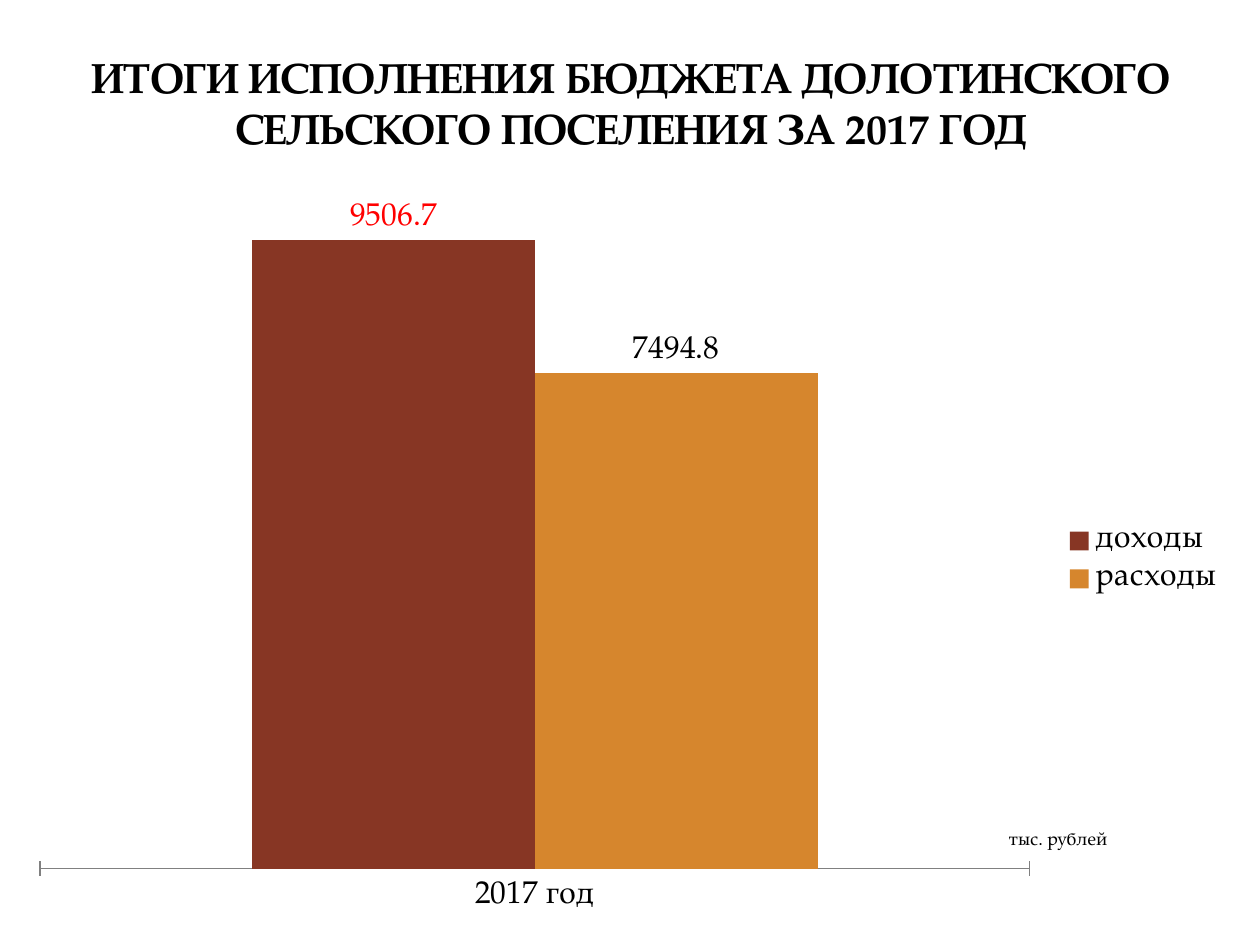
from lxml import etree
from pptx import Presentation
from pptx.chart.data import CategoryChartData
from pptx.dml.color import RGBColor
from pptx.enum.chart import XL_CHART_TYPE, XL_LABEL_POSITION, XL_LEGEND_POSITION, XL_TICK_LABEL_POSITION, XL_TICK_MARK
from pptx.enum.text import MSO_ANCHOR, PP_ALIGN
from pptx.oxml.ns import qn
from pptx.util import Pt

BARS = XL_CHART_TYPE.COLUMN_CLUSTERED
ABOVE = XL_LABEL_POSITION.OUTSIDE_END
RIGHT = XL_LEGEND_POSITION.RIGHT
LOW = XL_TICK_LABEL_POSITION.LOW
CROSS = XL_TICK_MARK.CROSS
TOP = MSO_ANCHOR.TOP
CENTER = PP_ALIGN.CENTER
LEFT = PP_ALIGN.LEFT

HUES = {
    "text": "000000",
    "income": "873624",
    "spend": "D6862D",
    "mark": "FF0000",
    "axis": "808080",
}


class Deck:
    face = "TeX Gyre Pagella"

    def __init__(self, wide, high):
        self.prs = Presentation()
        self.prs.slide_width, self.prs.slide_height = Pt(wide), Pt(high)
        self.slide = self.prs.slides.add_slide(self.prs.slide_layouts[5])

    def hue(self, name):
        return RGBColor.from_string(HUES[name])

    def font(self, font, size, hue="text", bold=False):
        font.name, font.size, font.bold = self.face, Pt(size), bold
        font.color.rgb = self.hue(hue)

    def label(self, shape, text, size, align, bold=False):
        frame = shape.text_frame
        frame.text = text
        frame.word_wrap = True
        frame.vertical_anchor = TOP
        para = frame.paragraphs[0]
        para.alignment = align
        self.font(para.runs[0].font, size, bold=bold)

    def title(self, text, box, size):
        shape = self.slide.shapes.title
        shape.left, shape.top, shape.width, shape.height = map(Pt, box)
        self.label(shape, text, size, CENTER, True)

    def note(self, text, box, size):
        shape = self.slide.shapes.add_textbox(*map(Pt, box))
        self.label(shape, text, size, LEFT)

    def place(self, chart, area):
        plot = chart.element.find(".//" + qn("c:plotArea"))
        for old in plot.findall(qn("c:layout")):
            plot.remove(old)
        layout = etree.Element(qn("c:layout"))
        plot.insert(0, layout)
        manual = etree.SubElement(layout, qn("c:manualLayout"))
        parts = [("layoutTarget", "inner"), ("xMode", "edge"), ("yMode", "edge")]
        for tag, val in parts + list(zip("xywh", area)):
            etree.SubElement(manual, qn("c:" + tag)).set("val", str(val))

    def chart(self, box, cats, rows, area, size):
        data = CategoryChartData(number_format="0.0")
        data.categories = cats
        for name, vals, _, _ in rows:
            data.add_series(name, vals)
        chart = self.slide.shapes.add_chart(BARS, *map(Pt, box), data).chart
        self.font(chart.font, size)
        chart.has_title = False
        chart.has_legend = True
        chart.legend.position = RIGHT
        chart.legend.include_in_layout = False
        self.font(chart.legend.font, size)

        axis = chart.category_axis
        axis.major_tick_mark = CROSS
        axis.tick_label_position = LOW
        axis.format.line.color.rgb = self.hue("axis")
        axis.format.line.width = Pt(1)
        scale = chart.value_axis
        scale.visible = False
        scale.has_major_gridlines = False
        scale.minimum_scale, scale.maximum_scale = 0, 10000

        plot = chart.plots[0]
        plot.vary_by_categories = False
        plot.gap_width, plot.overlap = 150, 0
        for bar, (_, _, fill, ink) in zip(plot.series, rows):
            bar.format.fill.solid()
            bar.format.fill.fore_color.rgb = self.hue(fill)
            tags = bar.data_labels
            tags.show_value = True
            tags.position = ABOVE
            tags.number_format = "0.0"
            tags.number_format_is_linked = False
            self.font(tags.font, size, ink)
        self.place(chart, area)


def main():
    deck = Deck(720, 540)
    deck.title(
        "ИТОГИ ИСПОЛНЕНИЯ БЮДЖЕТА ДОЛОТИНСКОГО СЕЛЬСКОГО ПОСЕЛЕНИЯ ЗА 2017 ГОД",
        (32, 26, 657, 94), 24)
    rows = [
        ("доходы", [9506.7], "income", "mark"),
        ("расходы", [7494.8], "spend", "text"),
    ]
    deck.chart((9, 110, 698, 420), ["2017 год"], rows, (0.02, 0.02, 0.81, 0.9), 18)
    deck.note("тыс. рублей", (569.5, 469, 136, 20), 10.5)
    deck.prs.save("out.pptx")


if __name__ == "__main__":
    main()
